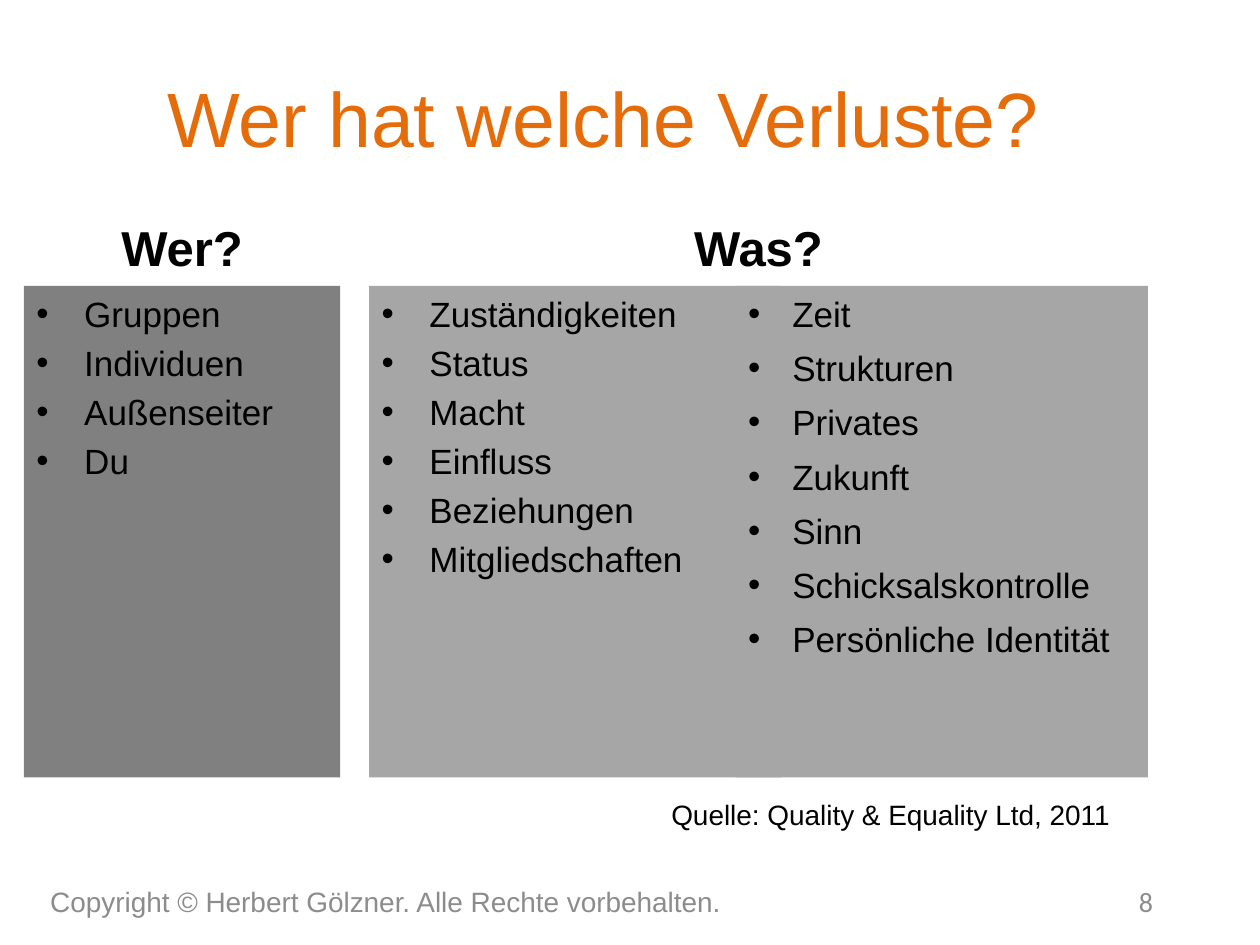
import pptx
import pptx.dml.color
import pptx.enum.shapes
import pptx.enum.text
import pptx.util
from lxml import etree
from pptx.util import Inches, Pt

ALIGN = pptx.enum.text.PP_ALIGN
ANCHOR = pptx.enum.text.MSO_ANCHOR
COLORS = {"title": "E46C0A", "text": "000000", "footer": "8C8C8C",
          "who": "808080", "what": "A6A6A6"}

PANEL_TOP, PANEL_HEIGHT = 2.27, 3.9
# left, width, fill, indent, space before, items
PANELS = [
    (0.19, 2.51, "who", 0.38, 4, ["Gruppen", "Individuen", "Außenseiter", "Du"]),
    (2.93, 3.27, "what", 0.38, 4,
     ["Zuständigkeiten", "Status", "Macht", "Einfluss", "Beziehungen",
      "Mitgliedschaften"]),
    (5.84, 3.27, "what", 0.35, 7,
     ["Zeit", "Strukturen", "Privates", "Zukunft", "Sinn",
      "Schicksalskontrolle", "Persönliche Identität"]),
]
# text, (left, top, width, height), size, colour, alignment, anchor, options
LABELS = [
    ("Wer hat welche Verluste? ", (0.5, 0.3, 8.75, 1.25), 44, "title",
     ALIGN.CENTER, ANCHOR.MIDDLE, {}),
    ("Copyright © Herbert Gölzner. Alle Rechte vorbehalten.",
     (0.3, 6.95, 6.36, 0.4), 16, "footer", ALIGN.LEFT, ANCHOR.MIDDLE, {}),
    ("8", (6.92, 6.95, 2.33, 0.4), 16, "footer", ALIGN.RIGHT, ANCHOR.MIDDLE,
     {"font": "Calibri"}),
    ("Wer?", (0.19, 1.68, 2.51, 0.57), 28, "text", ALIGN.CENTER, ANCHOR.TOP,
     {"bold": True}),
    ("Was?", (2.93, 1.68, 6.18, 0.57), 28, "text", ALIGN.CENTER, ANCHOR.TOP,
     {"bold": True}),
    ("Quelle: Quality & Equality Ltd, 2011", (5.23, 6.28, 3.73, 0.37), 16,
     "text", ALIGN.LEFT, ANCHOR.TOP, {"wrap": False}),
]


def rgb(name):
    return pptx.dml.color.RGBColor.from_string(COLORS[name])


def style(para, size, color, align, font="Arial", bold=False):
    para.alignment = align
    para.font.name = font
    para.font.size = Pt(size)
    para.font.bold = bold
    para.font.color.rgb = rgb(color)


def add_bullet(para, indent):
    props = para._p.get_or_add_pPr()
    props.set("marL", str(Inches(indent)))
    props.set("indent", str(-Inches(indent)))
    for tag, key, value in (("buFont", "typeface", "Arial"), ("buChar", "char", "•")):
        etree.SubElement(props, pptx.oxml.ns.qn("a:" + tag)).set(key, value)


def add_panel(page, left, width, fill, indent, gap, items):
    panel = page.shapes.add_shape(
        pptx.enum.shapes.MSO_SHAPE.RECTANGLE, Inches(left), Inches(PANEL_TOP),
        Inches(width), Inches(PANEL_HEIGHT))
    panel.shadow.inherit = False
    panel.fill.solid()
    panel.fill.fore_color.rgb = rgb(fill)
    panel.line.fill.background()
    frame = panel.text_frame
    frame.word_wrap = True
    frame.vertical_anchor = ANCHOR.TOP
    frame.text = "\n".join(items)
    for number, para in enumerate(frame.paragraphs):
        add_bullet(para, indent)
        para.space_before = Pt(gap if number else 0)
        style(para, 20, "text", ALIGN.LEFT)


def add_label(page, text, place, size, color, align, anchor, options):
    box = page.shapes.add_textbox(*map(Inches, place))
    frame = box.text_frame
    frame.word_wrap = options.get("wrap", True)
    frame.vertical_anchor = anchor
    frame.text = text
    style(frame.paragraphs[0], size, color, align,
          options.get("font", "Arial"), options.get("bold", False))


def main():
    deck = pptx.Presentation()
    deck.slide_width, deck.slide_height = Inches(10), Inches(7.5)
    page = deck.slides.add_slide(deck.slide_layouts[6])
    for panel in PANELS:
        add_panel(page, *panel)
    for label in LABELS:
        add_label(page, *label)
    deck.save("out.pptx")


if __name__ == "__main__":
    main()
